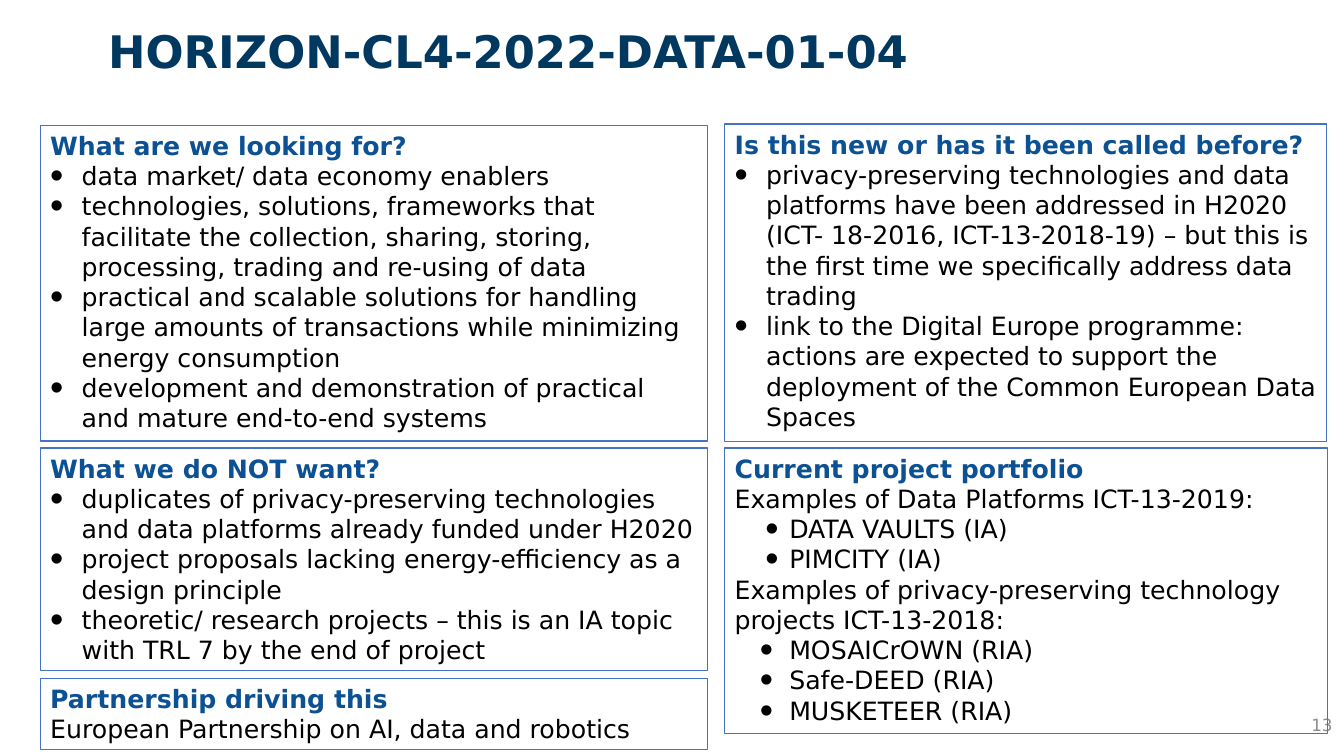
from lxml import etree
from pptx import Presentation
from pptx import util as u
from pptx.dml.color import RGBColor
from pptx.enum import shapes, text
from pptx.oxml.ns import qn

Pt = u.Pt
FONT = "DejaVu Sans"
HEADING, BODY, BORDER = "0C5193", "000000", "4472C4"


def color(value):
    return RGBColor.from_string(value)


def write(paragraph, words, size, ink, bold=False, indent=None):
    if indent:
        margin, hanging = indent
        props = paragraph._p.get_or_add_pPr()
        props.set("marL", str(Pt(margin)))
        props.set("indent", str(-Pt(hanging)))
        etree.SubElement(props, qn("a:buSzPct")).set("val", "150000")
        etree.SubElement(props, qn("a:buFont")).set("typeface", "Arial")
        etree.SubElement(props, qn("a:buChar")).set("char", "•")
    run = paragraph.add_run()
    run.text = words
    for name, value in {"name": FONT, "size": Pt(size), "bold": bold}.items():
        setattr(run.font, name, value)
    run.font.color.rgb = color(ink)


deck = Presentation()
deck.slide_width, deck.slide_height = Pt(960), Pt(540)
slide = deck.slides.add_slide(deck.slide_layouts[5])

topic = slide.shapes.title
topic.left, topic.top, topic.width, topic.height = Pt(70), Pt(13), Pt(623), Pt(46)
topic.text_frame.word_wrap = False
topic.text_frame.auto_size = text.MSO_AUTO_SIZE.NONE
topic.text_frame.vertical_anchor = text.MSO_ANCHOR.TOP
topic.text_frame.paragraphs[0].alignment = text.PP_ALIGN.LEFT
write(topic.text_frame.paragraphs[0], "HORIZON-CL4-2022-DATA-01-04", 32, "003860", True)

page = slide.shapes.add_textbox(Pt(743), Pt(503), Pt(216), Pt(29)).text_frame
page.word_wrap = True
page.vertical_anchor = text.MSO_ANCHOR.MIDDLE
page.paragraphs[0].alignment = text.PP_ALIGN.RIGHT
write(page.paragraphs[0], "13", 12, "8C8C8C")

plain, point, platform, privacy = None, (22.5, 22.5), (39, 17), (39, 21)
panels = [
    ((28.8, 89.5, 476.5, 225.5), 1, "What are we looking for?", [
        (point, "data market/ data economy enablers"),
        (point, "technologies, solutions, frameworks that facilitate the collection, "
                "sharing, storing, processing, trading and re-using of data"),
        (point, "practical and scalable solutions for handling large amounts of "
                "transactions while minimizing energy consumption"),
        (point, "development and demonstration of practical and mature end-to-end systems"),
    ]),
    ((28.8, 320, 476.5, 159), 1, "What we do NOT want?", [
        (point, "duplicates of privacy-preserving technologies and data platforms "
                "already funded under H2020"),
        (point, "project proposals lacking energy-efficiency as a design principle"),
        (point, "theoretic/ research projects – this is an IA topic with TRL 7 by the "
                "end of project"),
    ]),
    ((28.8, 484.5, 476.5, 51), 0.75, "Partnership driving this", [
        (plain, "European Partnership on AI, data and robotics"),
    ]),
    ((517.7, 88.6, 430, 226.8), 1, "Is this new or has it been called before?", [
        (point, "privacy-preserving technologies and data platforms have been addressed "
                "in H2020 (ICT- 18-2016, ICT-13-2018-19) – but this is the first time we "
                "specifically address data trading"),
        (point, "link to the Digital Europe programme: actions are expected to support "
                "the deployment of the Common European Data Spaces"),
    ]),
    ((517.7, 320, 430.6, 203.8), 1, "Current project portfolio", [
        (plain, "Examples of Data Platforms ICT-13-2019:"),
        (platform, "DATA VAULTS (IA)"),
        (platform, "PIMCITY (IA)"),
        (plain, "Examples of privacy-preserving technology projects ICT-13-2018:"),
        (privacy, "MOSAICrOWN (RIA)"),
        (privacy, "Safe-DEED (RIA)"),
        (privacy, "MUSKETEER (RIA)"),
    ]),
]

for place, border_width, heading, entries in panels:
    panel = slide.shapes.add_shape(shapes.MSO_SHAPE.RECTANGLE, *map(Pt, place))
    panel.shadow.inherit = False
    panel.fill.background()
    panel.line.color.rgb = color(BORDER)
    panel.line.width = Pt(border_width)
    frame = panel.text_frame
    frame.word_wrap = True
    frame.auto_size = text.MSO_AUTO_SIZE.SHAPE_TO_FIT_TEXT
    frame.vertical_anchor = text.MSO_ANCHOR.TOP
    frame.paragraphs[0].alignment = text.PP_ALIGN.LEFT
    write(frame.paragraphs[0], heading, 18, HEADING, True)
    for indent, words in entries:
        entry = frame.add_paragraph()
        entry.alignment = text.PP_ALIGN.LEFT
        write(entry, words, 18, BODY, indent=indent)

deck.save("out.pptx")
